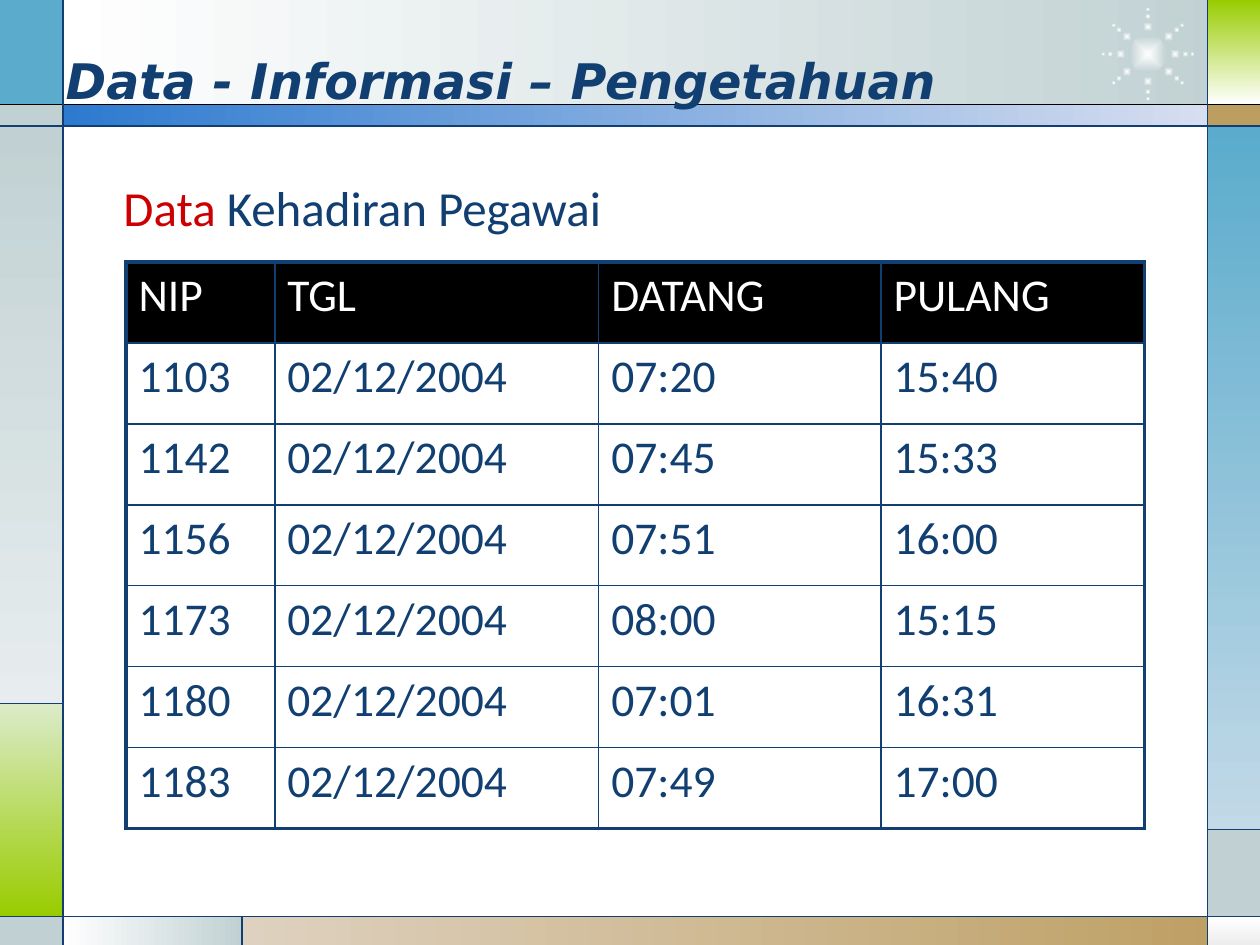
from math import cos, radians, sin

from lxml import etree
from pptx import Presentation
from pptx.dml.color import RGBColor
from pptx.enum import shapes as kinds, text as txt
from pptx.oxml import ns
from pptx.util import Cm, Pt

NAVY = RGBColor(0x11, 0x3F, 0x71)
RED = RGBColor(0xCC, 0x00, 0x00)
BLACK = RGBColor(0x00, 0x00, 0x00)
WHITE = RGBColor(0xFF, 0xFF, 0xFF)
GREY = RGBColor(0xC1, 0xD1, 0xD3)
PALE_GREY = RGBColor(0xE7, 0xED, 0xEE)
MIST = RGBColor(0xED, 0xED, 0xED)
SKY = RGBColor(0x5A, 0xAB, 0xCC)
PALE_SKY = RGBColor(0xC2, 0xD9, 0xE7)
LIME = RGBColor(0x99, 0xCC, 0x00)
PALE_LIME = RGBColor(0xDB, 0xEB, 0xC9)
GOLD = RGBColor(0xBD, 0x9E, 0x61)
PALE_GOLD = RGBColor(0xDE, 0xD1, 0xBF)
BLUE = RGBColor(0x2D, 0x7A, 0xCF)
PALE_BLUE = RGBColor(0xD7, 0xDE, 0xF0)

# Content
HEADING = "Data - Informasi – Pengetahuan"
CAPTION = [("Data ", RED), ("Kehadiran Pegawai", NAVY)]
DATE = "02/12/2004"
ATTENDANCE = [
    ("NIP", "TGL", "DATANG", "PULANG"),
    ("1103", DATE, "07:20", "15:40"),
    ("1142", DATE, "07:45", "15:33"),
    ("1156", DATE, "07:51", "16:00"),
    ("1173", DATE, "08:00", "15:15"),
    ("1180", DATE, "07:01", "16:31"),
    ("1183", DATE, "07:49", "17:00"),
]
COLUMN_WIDTHS = [3.0, 6.53, 5.69, 5.31]
TABLE_HEIGHT = 11.43

# Frame grid, in cm
WIDTH, HEIGHT = 25.4, 19.05
LEFT, RIGHT = 1.27, 24.34
HEADER, BAND, FOOTER = 2.11, 2.54, 18.47
LIME_TOP, SKY_END, GOLD_LEFT = 14.18, 16.72, 4.88
ACROSS, DOWN = 0, 270

# left, top, right, bottom, colours, gradient direction
BLOCKS = [
    (LEFT, 0, 24.82, HEADER, (WHITE, GREY), ACROSS),
    (0, 0, LEFT, HEADER, (SKY,), None),
    (0, HEADER, LEFT, BAND, (GREY,), None),
    (0, BAND, LEFT, LIME_TOP, (GREY, PALE_GREY), DOWN),
    (0, LIME_TOP, LEFT, FOOTER, (PALE_LIME, LIME), DOWN),
    (0, FOOTER, LEFT, HEIGHT, (GREY,), None),
    (LEFT, FOOTER, GOLD_LEFT, HEIGHT, (WHITE, GREY), ACROSS),
    (GOLD_LEFT, FOOTER, WIDTH, HEIGHT, (PALE_GOLD, GOLD), ACROSS),
    (RIGHT, FOOTER, WIDTH, HEIGHT, (WHITE, MIST), DOWN),
    (RIGHT, SKY_END, WIDTH, FOOTER, (GREY,), None),
    (RIGHT, BAND, WIDTH, SKY_END, (SKY, PALE_SKY), DOWN),
    (RIGHT, HEADER, WIDTH, BAND, (GOLD,), None),
    (RIGHT, 0, WIDTH, HEADER, (LIME, WHITE), DOWN),
    (LEFT, HEADER, RIGHT, BAND, (BLUE, PALE_BLUE), ACROSS),
]
RULES = [
    (0, HEADER, WIDTH, HEADER, BLACK),
    (0, BAND, WIDTH, BAND, NAVY),
    (0, FOOTER, WIDTH, FOOTER, NAVY),
    (LEFT, 0, LEFT, HEIGHT, NAVY),
    (RIGHT, 0, RIGHT, HEIGHT, NAVY),
    (LEFT, LIME_TOP, 0, LIME_TOP, NAVY),
    (GOLD_LEFT, FOOTER, GOLD_LEFT, HEIGHT, NAVY),
    (RIGHT, SKY_END, WIDTH, SKY_END, NAVY),
]
SUN_CENTRE, SUN_SIZE = (23.14, 1.09), 0.76
RAY_ANGLES = [0, 40, 90, 140, 180, 220, 270, 320]
RAY_DOTS = [(0.55, 0.19), (0.76, 0.12), (0.9, 0.09)]  # radius, size


def write(paragraph, text, size=26, color=NAVY, font="Calibri", bold=False, italic=False):
    run = paragraph.add_run()
    run.text = text
    run.font.size, run.font.name = Pt(size), font
    run.font.bold, run.font.italic = bold, italic
    run.font.color.rgb = color


def paint(shape, colours, angle):
    shape.shadow.inherit = False
    shape.line.fill.background()
    if len(colours) == 1:
        shape.fill.solid()
        shape.fill.fore_color.rgb = colours[0]
        return
    shape.fill.gradient()
    shape.fill.gradient_angle = angle
    for stop, colour in zip(shape.fill.gradient_stops, colours):
        stop.color.rgb = colour


def add_glow(group, x, y, size):
    dot = group.shapes.add_shape(kinds.MSO_SHAPE.OVAL, Cm(x - size / 2),
                                 Cm(y - size / 2), Cm(size), Cm(size))
    paint(dot, (WHITE, GREY), 0)
    # Radiate from the middle
    linear = dot.element.find(".//" + ns.qn("a:lin"))
    radial = etree.Element(ns.qn("a:path"), {"path": "shape"})
    etree.SubElement(radial, ns.qn("a:fillToRect"), {side: "50000" for side in "ltrb"})
    linear.getparent().replace(linear, radial)


def set_border(cell, side, points):
    line = etree.SubElement(cell._tc.get_or_add_tcPr(), ns.qn("a:ln" + side),
                            w=str(int(Pt(points))))
    solid = etree.SubElement(line, ns.qn("a:solidFill"))
    etree.SubElement(solid, ns.qn("a:srgbClr"), val=str(NAVY))


def add_frame(slide):
    for left, top, right, bottom, colours, angle in BLOCKS:
        block = slide.shapes.add_shape(kinds.MSO_SHAPE.RECTANGLE, Cm(left), Cm(top),
                                       Cm(right - left), Cm(bottom - top))
        paint(block, colours, angle)

    # Sun ornament
    sun = slide.shapes.add_group_shape()
    x, y = SUN_CENTRE
    add_glow(sun, x, y, SUN_SIZE)
    for angle in map(radians, RAY_ANGLES):
        for radius, size in RAY_DOTS:
            add_glow(sun, x + radius * cos(angle), y + radius * sin(angle), size)

    for x1, y1, x2, y2, colour in RULES:
        rule = slide.shapes.add_connector(kinds.MSO_CONNECTOR.STRAIGHT,
                                          Cm(x1), Cm(y1), Cm(x2), Cm(y2))
        rule.line.color.rgb, rule.line.width = colour, Pt(0.75)
        etree.SubElement(rule.element.spPr, ns.qn("a:effectLst"))


def add_heading(slide):
    heading = slide.shapes.title
    heading.left, heading.top, heading.width, heading.height = Cm(1.07), Cm(0), Cm(23.29), Cm(2.34)
    frame = heading.text_frame
    frame.word_wrap, frame.auto_size = True, txt.MSO_AUTO_SIZE.NONE
    frame.vertical_anchor = txt.MSO_ANCHOR.BOTTOM
    frame.paragraphs[0].alignment = txt.PP_ALIGN.LEFT
    write(frame.paragraphs[0], HEADING, size=28, font="DejaVu Sans", bold=True, italic=True)
    # Bring the title in front of the frame
    heading.element.getparent().append(heading.element)


def add_caption(slide):
    frame = slide.shapes.add_textbox(Cm(1.27), Cm(3.46), Cm(22.66), Cm(1.6)).text_frame
    frame.word_wrap, frame.margin_left = True, Cm(1.22)
    for text, colour in CAPTION:
        write(frame.paragraphs[0], text, size=28, color=colour)


def add_attendance(slide):
    count = len(ATTENDANCE)
    table = slide.shapes.add_table(count, len(COLUMN_WIDTHS), Cm(2.54), Cm(5.28),
                                   Cm(sum(COLUMN_WIDTHS)), Cm(TABLE_HEIGHT)).table
    table.horz_banding = False
    for column, width in zip(table.columns, COLUMN_WIDTHS):
        column.width = Cm(width)
    last_row, last_column = count - 1, len(COLUMN_WIDTHS) - 1
    for r, record in enumerate(ATTENDANCE):
        table.rows[r].height = Cm(TABLE_HEIGHT / count)
        for c, value in enumerate(record):
            cell = table.cell(r, c)
            write(cell.text_frame.paragraphs[0], value, color=NAVY if r else WHITE)
            outer = {"L": c == 0, "R": c == last_column, "T": r == 0, "B": r == last_row}
            for side, is_outer in outer.items():
                set_border(cell, side, 2.25 if is_outer else 1)
            if r:
                cell.fill.background()
            else:
                cell.fill.solid()
                cell.fill.fore_color.rgb = BLACK


def main():
    deck = Presentation()
    deck.slide_width, deck.slide_height = Cm(WIDTH), Cm(HEIGHT)
    slide = deck.slides.add_slide(deck.slide_layouts[5])
    add_frame(slide)
    add_heading(slide)
    add_caption(slide)
    add_attendance(slide)
    deck.save("out.pptx")


if __name__ == "__main__":
    main()
